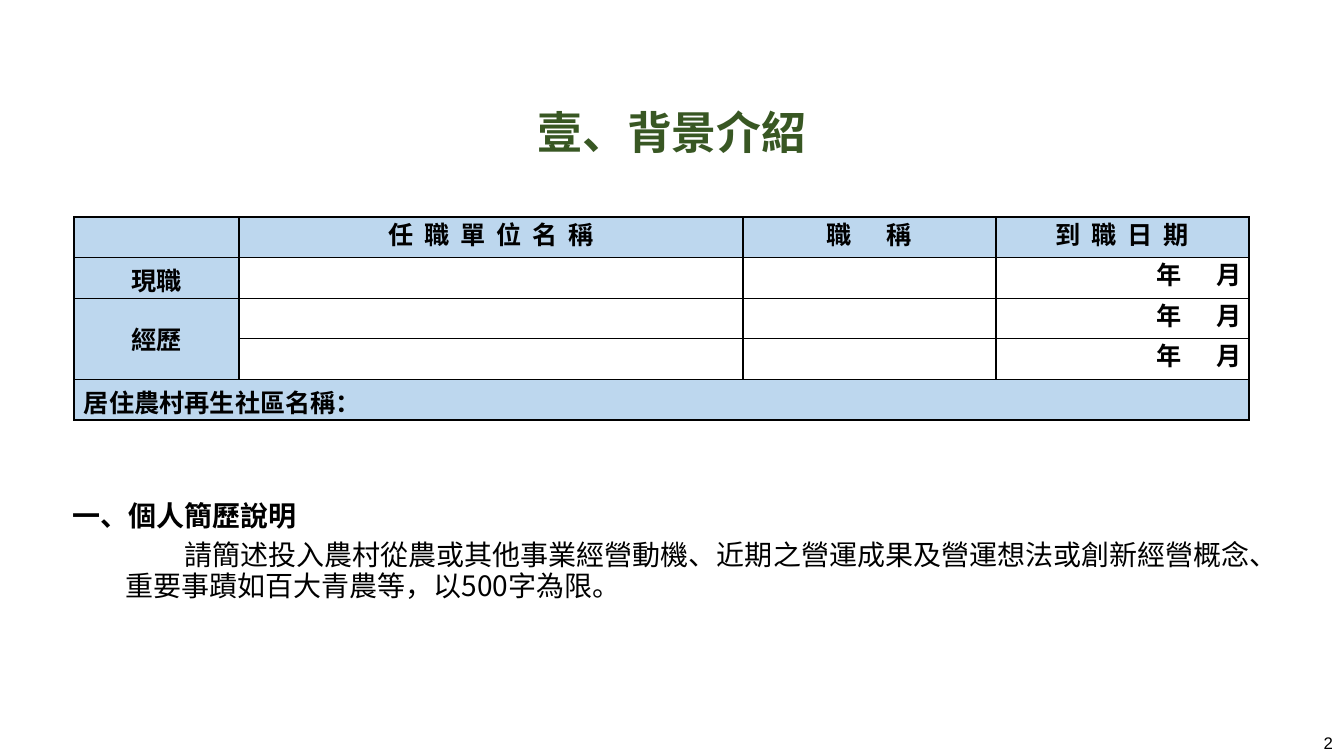
from dataclasses import dataclass

from lxml import etree
from pptx import Presentation
from pptx.dml.color import RGBColor
from pptx.enum.text import MSO_ANCHOR, MSO_AUTO_SIZE, PP_ALIGN
from pptx.oxml.ns import qn
from pptx.util import Emu, Pt

LEFT, MID, RIGHT = PP_ALIGN.LEFT, PP_ALIGN.CENTER, PP_ALIGN.RIGHT
TOP, CENTER = MSO_ANCHOR.TOP, MSO_ANCHOR.MIDDLE
SCALE = 914400 / 100.8
FACE = "Noto Sans CJK SC"
COLORS = {"title": "385723", "text": "000000", "line": "000000", "head": "BDD7EE"}
COLS = (165, 504, 253, 253)
ROWS = 5
THIN, WIDE = 3.6, 20.8


@dataclass(frozen=True)
class Entry:
    """One filled table cell; gap is the extra width of its spaces in points."""
    row: int
    col: int
    text: str
    align: PP_ALIGN = MID
    gap: float = 0
    lead: int | None = 20
    top: int = 0


ENTRIES = (
    Entry(0, 1, "任 職 單 位 名 稱", gap=THIN),
    Entry(0, 2, "職 稱", gap=WIDE),
    Entry(0, 3, "到 職 日 期", gap=THIN),
    Entry(1, 0, "現職", lead=None, top=4),
    Entry(2, 0, "經歷", lead=None),
    Entry(4, 0, "居住農村再生社區名稱：", LEFT, lead=None, top=4),
    *(Entry(row, 3, "年 月", RIGHT, WIDE) for row in (1, 2, 3)),
)


def px(size: int) -> Emu:
    return Emu(round(size * SCALE))


def place(shape, left: int, top: int, width: int, height: int) -> None:
    shape.left, shape.top = px(left), px(top)
    shape.width, shape.height = px(width), px(height)


def style(para, size: int, bold: bool = False, color: str = "text",
          align: PP_ALIGN = LEFT, face: str = FACE) -> None:
    para.alignment = align
    para.space_before = Pt(0)
    font = para.font
    font.size, font.bold, font.name = Pt(size), bold, face
    font.color.rgb = RGBColor.from_string(COLORS[color])
    latin = para._p.pPr.find(qn("a:defRPr")).find(qn("a:latin"))
    asian = etree.Element(qn("a:ea"), typeface=face)
    latin.addnext(asian)


def indent(para, left: int, first: int) -> None:
    """Set the indents and turn the bullet off."""
    props = para._p.get_or_add_pPr()
    props.set("marL", str(px(left)))
    props.set("indent", str(px(first)))
    etree.SubElement(props, qn("a:buNone"))


def frame(shape, anchor: MSO_ANCHOR):
    text = shape.text_frame
    text.word_wrap = True
    text.auto_size = MSO_AUTO_SIZE.NONE
    text.vertical_anchor = anchor
    return text


def border(cell) -> None:
    props = cell._tc.get_or_add_tcPr()
    for side in ("lnL", "lnR", "lnT", "lnB"):
        line = etree.SubElement(props, qn(f"a:{side}"), w=str(Pt(1)))
        fill = etree.SubElement(line, qn("a:solidFill"))
        etree.SubElement(fill, qn("a:srgbClr"), val=COLORS["line"])


def write(cell, entry: Entry) -> None:
    cell.margin_top = px(entry.top)
    para = cell.text_frame.paragraphs[0]
    for i, word in enumerate(entry.text.split()):
        if i:
            space = para.add_run()
            space.text = " "
            space.font._rPr.set("spc", str(round(entry.gap * 100)))
        para.add_run().text = word
    if entry.lead:
        para.line_spacing = Pt(entry.lead)
    style(para, 18, True, align=entry.align)


def add_grid(slide) -> None:
    high = px(203)
    table = slide.shapes.add_table(
        ROWS, len(COLS), px(74), px(217), px(sum(COLS)), high).table
    table.first_row = table.horz_banding = False
    for col, width in zip(table.columns, COLS):
        col.width = px(width)
    for r, row in enumerate(table.rows):
        row.height = Emu(high // ROWS)
        for c, cell in enumerate(row.cells):
            border(cell)
            if r in (0, ROWS - 1) or c == 0:
                cell.fill.solid()
                cell.fill.fore_color.rgb = RGBColor.from_string(COLORS["head"])
            else:
                cell.fill.background()
            cell.vertical_anchor = CENTER
            cell.margin_top = cell.margin_bottom = 0
            side = 10 if c == 0 else 7
            cell.margin_left = cell.margin_right = px(side)
    table.cell(2, 0).merge(table.cell(3, 0))
    table.cell(4, 0).merge(table.cell(4, 3))
    for entry in ENTRIES:
        write(table.cell(entry.row, entry.col), entry)


def add_title(slide) -> None:
    title = slide.shapes.title
    place(title, 0, 99, 1344, 65)
    para = frame(title, CENTER).paragraphs[0]
    para.text = "壹、背景介紹"
    style(para, 32, True, "title", MID)


def add_body(slide) -> None:
    body = slide.placeholders[1]
    place(body, 56, 496, 1231, 112)
    text = frame(body, TOP)
    lines = (
        ("一、個人簡歷說明", True, 6, 0),
        ("請簡述投入農村從農或其他事業經營動機、近期之營運成果及營運想法或"
         "創新經營概念、重要事蹟如百大青農等，以500字為限。", False, 59, 59),
    )
    for i, (words, bold, left, first) in enumerate(lines):
        para = text.add_paragraph() if i else text.paragraphs[0]
        para.text = words
        para.line_spacing, para.space_after = Pt(22), Pt(6)
        indent(para, left, first)
        style(para, 20, bold)


def add_number(slide) -> None:
    box = slide.shapes.add_textbox(0, 0, 0, 0)
    place(box, 1041, 729, 302, 27)
    para = frame(box, CENTER).paragraphs[0]
    para.text = "2"
    style(para, 12, align=RIGHT, face="Arial")


def main() -> None:
    deck = Presentation()
    deck.slide_width, deck.slide_height = px(1344), px(756)
    slide = deck.slides.add_slide(deck.slide_layouts[1])
    add_title(slide)
    add_number(slide)
    add_body(slide)
    add_grid(slide)
    deck.save("out.pptx")


if __name__ == "__main__":
    main()
